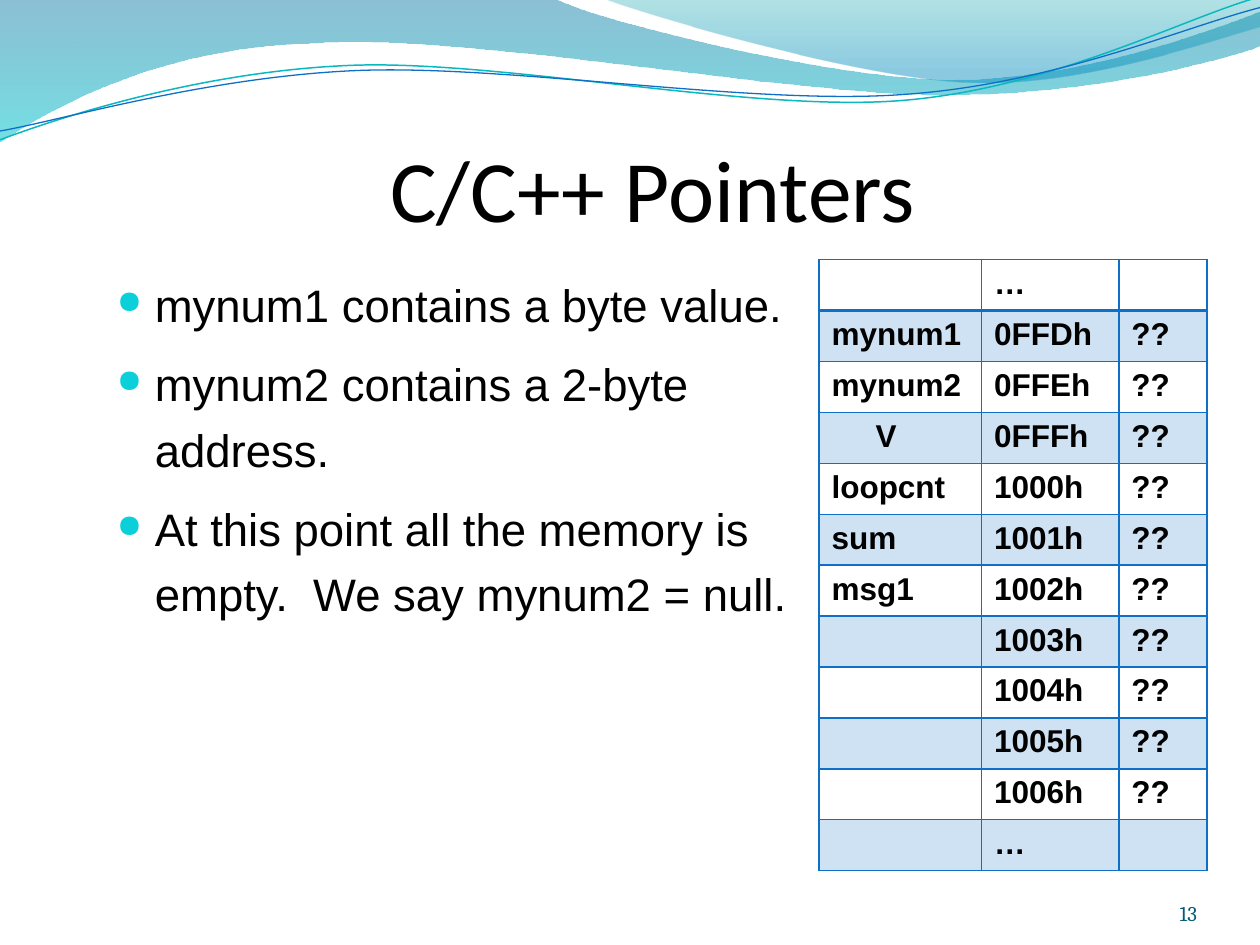
from dataclasses import dataclass
from math import cos, radians, sin

from lxml import etree
from pptx import Presentation
from pptx.dml.color import RGBColor
from pptx.enum.text import MSO_ANCHOR, PP_ALIGN
from pptx.oxml.ns import qn
from pptx.util import Inches, Pt

TOP, BOTTOM = MSO_ANCHOR.TOP, MSO_ANCHOR.BOTTOM
LEFT, RIGHT = PP_ALIGN.LEFT, PP_ALIGN.RIGHT
WIDE, HIGH = 10, 7.5


@dataclass(frozen=True)
class Theme:
    ink: str = "000000"
    blue: str = "0F6FC6"
    teal: str = "0AB8BF"
    dot: str = "0BD0D9"
    page: str = "045D75"
    head: str = "Calibri"
    body: str = "Arial"
    foot: str = "Cambria"
    head_size: int = 50
    body_size: int = 26
    cell_size: int = 18
    foot_size: int = 12
    tint: int = 20


LOOK = Theme()

# Each wave: start point, then steps of one point (line) or three (curve).
SWELL = [
    [(0, 0)],
    [(4.4, -0.01)],
    [(4.76, 0.17), (6.64, 0.63), (7.58, 0.63)],
    [(8.53, 0.63), (9.58, 0.26), (10, 0.09)],
    [(10.01, 0.36)],
    [(9.83, 0.44), (8.7, 0.76), (7.46, 0.75)],
    [(6.22, 0.75), (3.82, 0.28), (2.57, 0.34)],
    [(1.29, 0.36), (0.46, 0.83), (-0.01, 1.13)],
    [(0, 0)],
]
CREST = [
    [(4.79, -0.01)],
    [(5.09, 0.11), (6.82, 0.62), (7.69, 0.65)],
    [(8.56, 0.69), (9.61, 0.32), (10, 0.21)],
    [(10, 0)],
    [(4.79, -0.01)],
]
UPPER = [
    [(0, 1.11)],
    [(0.48, 0.93), (1.58, 0.57), (2.77, 0.52)],
    [(3.95, 0.47), (5.93, 0.89), (7.13, 0.8)],
    [(8.33, 0.71), (9.38, 0.15), (9.98, -0.02)],
]
LOWER = [
    [(0, 1.04)],
    [(0.47, 0.96), (1.64, 0.61), (2.83, 0.56)],
    [(4.03, 0.51), (5.97, 0.84), (7.17, 0.75)],
    [(8.36, 0.67), (9.41, 0.21), (10, 0.06)],
]

POINTS = [
    "mynum1 contains a byte value.",
    "mynum2 contains a 2-byte address.",
    "At this point all the memory is empty.  We say mynum2 = null.",
]
NAMES = ["mynum1", "mynum2", "V", "loopcnt", "sum", "msg1", "", "", "", ""]
PLACES = ["0FFDh", "0FFEh", "0FFFh"] + [f"{n}h" for n in range(1000, 1007)]
MEMORY = [("", "…", ""), *((n, p, "??") for n, p in zip(NAMES, PLACES)),
          ("", "…", "")]


def color(code):
    return RGBColor.from_string(code)


def add(parent, tag, **attrs):
    return etree.SubElement(parent, qn(tag), attrs)


def fade(node, *shares):
    """Give each colour under node its opacity in percent."""
    for tone, share in zip(list(node.iter(qn("a:srgbClr"))), shares):
        add(tone, "a:alpha", val=str(share * 1000))


def write(frame, lines, font=LOOK.body, size=LOOK.body_size, tone=LOOK.ink,
          bold=False, align=LEFT, anchor=TOP, pad=None, space=None,
          before=None, bullet=False):
    frame.word_wrap = True
    frame.vertical_anchor = anchor
    if pad is not None:
        frame.margin_left = frame.margin_right = Inches(pad)
        frame.margin_top = frame.margin_bottom = Inches(pad)
    for i, line in enumerate(lines):
        para = frame.add_paragraph() if i else frame.paragraphs[0]
        para.alignment = align
        para.line_spacing = space
        para.space_before = before
        face = para.font
        if line:
            run = para.add_run()
            run.text = line
            face = run.font
        face.name, face.size, face.bold = font, Pt(size), bold
        face.color.rgb = color(tone)
        if bullet:
            mark(para)


def mark(para, inset=0.3):
    props = para._p.get_or_add_pPr()
    props.set("marL", str(Inches(inset)))
    props.set("indent", str(-Inches(inset)))
    add(add(props, "a:buClr"), "a:srgbClr", val=LOOK.dot)
    add(props, "a:buSzPct", val="70000")
    add(props, "a:buChar", char="●")


def label(slide, box, lines, **style):
    shape = slide.shapes.add_textbox(*map(Inches, box))
    write(shape.text_frame, lines, **style)


def wave(slide, box, steps, closed=False, turn=0):
    """Draw steps, given as seen on the slide, in a box turned by degrees."""
    left, top, wide, high = box
    midx, midy = left + wide / 2, top + high / 2
    c, s = cos(radians(-turn)), sin(radians(-turn))
    pen = slide.shapes.build_freeform(Inches(left), Inches(top))
    pen.add_line_segments([(Inches(left + wide), Inches(top + high))],
                          close=False)
    shape = pen.convert_to_shape()
    route = next(shape._element.iter(qn("a:path")))
    for part in list(route):
        route.remove(part)
    for i, step in enumerate(steps):
        kind = "cubicBezTo" if len(step) == 3 else "lnTo" if i else "moveTo"
        part = add(route, f"a:{kind}")
        for x, y in step:
            dx, dy = x - midx, y - midy
            add(part, "a:pt", x=str(Inches(dx * c - dy * s + wide / 2)),
                y=str(Inches(dx * s + dy * c + high / 2)))
    if closed:
        add(route, "a:close")
    shape.rotation = turn
    shape.shadow.inherit = False
    return shape


def band(slide, box, steps, stops):
    shape = wave(slide, box, steps, closed=True)
    shape.line.fill.background()
    shape.fill.gradient()
    shape.fill.gradient_angle = 270
    for stop, (place, tone, _) in zip(shape.fill.gradient_stops, stops):
        stop.position = place
        stop.color.rgb = color(tone)
    fade(shape._element.spPr, *(share for *_, share in stops))


def strand(slide, box, steps, tone, width):
    shape = wave(slide, box, steps, turn=357.3)
    shape.fill.background()
    shape.line.color.rgb = color(tone)
    shape.line.width = Pt(width)


def banner(slide, left, top):
    band(slide, (left, top, 10.02, 1.14), SWELL,
         [(0, "0074A1", 45), (1, "00C6CF", 55)])
    band(slide, (left + 4.8, top, 5.21, 0.7), CREST,
         [(0, "00A1A9", 30), (0.8, "008BBF", 45)])
    strand(slide, (left - 0.01, top + 0.23, 10.02, 0.71), UPPER,
           LOOK.teal, 0.85)
    strand(slide, (left - 0.01, top + 0.31, 10.03, 0.58), LOWER,
           LOOK.blue, 0.75)


def edge(cell, side, width):
    props = cell._tc.get_or_add_tcPr()
    line = add(props, f"a:ln{side}", w=str(Pt(width)))
    add(add(line, "a:solidFill"), "a:srgbClr", val=LOOK.blue)


def memory(slide, box, shares=(1.29, 1.09, 0.7), short=0.39):
    """Draw the memory map; its next-to-last row is the short one."""
    count = len(MEMORY)
    grid = slide.shapes.add_table(count, 3, *map(Inches, box)).table
    grid.first_row = grid.horz_banding = False
    for col, share in zip(grid.columns, shares):
        col.width = Inches(box[2] * share / sum(shares))
    for i, texts in enumerate(MEMORY):
        tall = short if i == count - 2 else (box[3] - short) / (count - 1)
        grid.rows[i].height = Inches(tall)
        for j, text in enumerate(texts):
            cell = grid.cell(i, j)
            for side in "LRTB":
                heavy = (i, side) in ((0, "B"), (1, "T"))
                edge(cell, side, 2 if heavy else 1)
            if i % 2:
                cell.fill.solid()
                cell.fill.fore_color.rgb = color(LOOK.blue)
                fade(cell._tc.tcPr.find(qn("a:solidFill")), LOOK.tint)
            else:
                cell.fill.background()
            if text == "V":
                cell.margin_left = Inches(0.45)
            write(cell.text_frame, [text], size=LOOK.cell_size, bold=True)


def main():
    deck = Presentation()
    deck.slide_width, deck.slide_height = Inches(WIDE), Inches(HIGH)
    slide = deck.slides.add_slide(deck.slide_layouts[6])
    banner(slide, -0.01, -0.01)
    label(slide, (3, 1.02, 4.67, 0.6), ["C/C++ Pointers"],
          font=LOOK.head, size=LOOK.head_size)
    label(slide, (0.83, 2.06, 5.58, 4.33), POINTS, space=1.2,
          before=Pt(8), bullet=True)
    label(slide, (8.67, 6.95, 0.83, 0.4), ["13"], font=LOOK.foot,
          size=LOOK.foot_size, tone=LOOK.page, align=RIGHT,
          anchor=BOTTOM, pad=0)
    memory(slide, (6.5, 2.06, 3.08, 4.84))
    deck.save("out.pptx")


if __name__ == "__main__":
    main()
